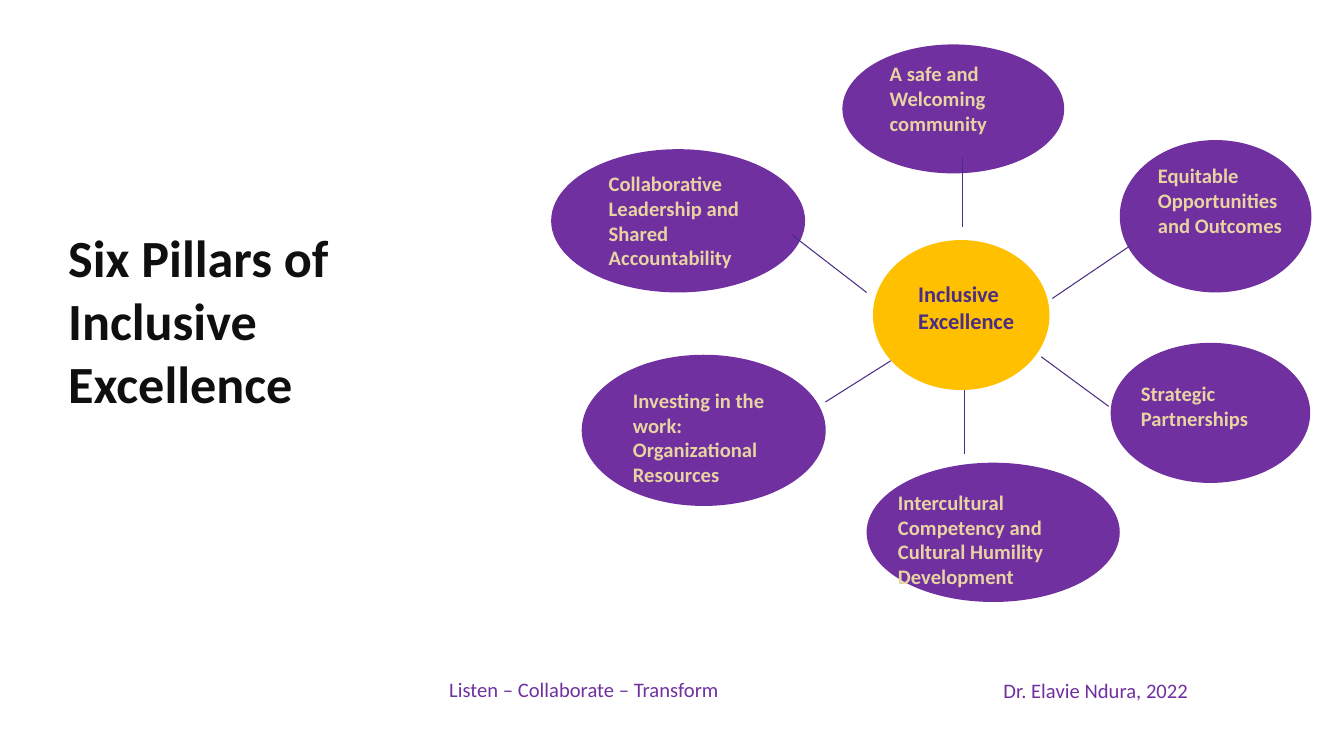
from dataclasses import dataclass

import pptx
import pptx.dml.color
import pptx.enum.shapes
import pptx.enum.text
import pptx.oxml.ns
import pptx.util
from lxml import etree
from pptx.util import Cm


@dataclass(frozen=True)
class Theme:
    purple: str = "7030A0"
    gold: str = "FFC000"
    indigo: str = "4B2E83"
    sand: str = "E8D3A2"
    ink: str = "0F0F0F"
    font: str = "Calibri"
    title_size: float = 37.3
    hub_size: float = 16
    body_size: float = 14.7
    spoke_width: float = 0.75


THEME = Theme()

PILLARS = [
    ("A safe and Welcoming community",
     (21.23, 1.12, 5.59, 3.25), (22.17, 1.42, 3.73, 2.13)),
    ("Intercultural Competency and Cultural Humility Development",
     (21.84, 11.66, 6.38, 3.51), (22.38, 12.22, 4.42, 2.77)),
    ("Equitable Opportunities and Outcomes",
     (28.22, 3.53, 4.83, 3.84), (28.93, 3.99, 3.76, 2.13)),
    ("Strategic Partnerships",
     (27.99, 8.64, 5.03, 3.53), (28.5, 9.47, 3.89, 1.5)),
    ("Collaborative Leadership and Shared Accountability",
     (13.89, 3.76, 6.4, 3.61), (15.09, 4.19, 4.45, 2.77)),
    ("Investing in the work: Organizational Resources",
     (14.66, 8.94, 6.15, 3.81), (15.7, 9.65, 4.45, 2.77)),
]

SPOKES = [
    (24.26, 3.99, 24.26, 5.72),
    (19.96, 5.92, 21.84, 7.37),
    (24.31, 9.83, 24.31, 11.43),
    (26.52, 7.52, 28.47, 6.2),
    (26.24, 8.99, 27.94, 10.24),
    (20.8, 10.13, 22.45, 9.09),
]


def rgb(value):
    return pptx.dml.color.RGBColor.from_string(value)


def lengths(values):
    return [Cm(value) for value in values]


def add_oval(slide, bounds, color):
    oval = slide.shapes.add_shape(
        pptx.enum.shapes.MSO_SHAPE.OVAL, *lengths(bounds))
    oval.shadow.inherit = False
    oval.fill.solid()
    oval.fill.fore_color.rgb = rgb(color)
    oval.line.fill.background()


def add_spoke(slide, ends):
    spoke = slide.shapes.add_connector(
        pptx.enum.shapes.MSO_CONNECTOR.STRAIGHT, *lengths(ends))
    spoke.line.color.rgb = rgb(THEME.indigo)
    spoke.line.width = pptx.util.Pt(THEME.spoke_width)
    etree.SubElement(spoke._element.spPr, pptx.oxml.ns.qn("a:effectLst"))


def add_text(slide, text, bounds, *, color, size=THEME.body_size, bold=False,
             inset=0.25):
    frame = slide.shapes.add_textbox(*lengths(bounds)).text_frame
    frame.word_wrap = True
    frame.auto_size = pptx.enum.text.MSO_AUTO_SIZE.SHAPE_TO_FIT_TEXT
    frame.margin_left = Cm(inset)
    frame.text = text
    for paragraph in frame.paragraphs:
        for run in paragraph.runs:
            run.font.name = THEME.font
            run.font.size = pptx.util.Pt(size)
            run.font.bold = bold
            run.font.color.rgb = rgb(color)


def main():
    deck = pptx.Presentation()
    deck.slide_width, deck.slide_height = Cm(33.87), Cm(19.05)
    slide = deck.slides.add_slide(deck.slide_layouts[6])

    for _, oval_bounds, _ in PILLARS:
        add_oval(slide, oval_bounds, THEME.purple)
    add_oval(slide, (22, 6.05, 4.45, 3.78), THEME.gold)

    for ends in SPOKES:
        add_spoke(slide, ends)

    for label, _, label_bounds in PILLARS:
        add_text(slide, label, label_bounds, color=THEME.sand, bold=True)
    add_text(slide, "Inclusive\nExcellence", (22.78, 6.93, 3.45, 1.63),
             color=THEME.indigo, size=THEME.hub_size, bold=True, inset=0.36)

    add_text(slide, "Six Pillars of Inclusive Excellence",
             (1.47, 5.56, 8.05, 5.05),
             color=THEME.ink, size=THEME.title_size, bold=True)
    add_text(slide, "Listen – Collaborate – Transform",
             (11.07, 16.94, 13.94, 0.89), color=THEME.purple)
    add_text(slide, "Dr. Elavie Ndura, 2022",
             (25.04, 16.97, 7.54, 0.89), color=THEME.purple)

    deck.save("out.pptx")


if __name__ == "__main__":
    main()
